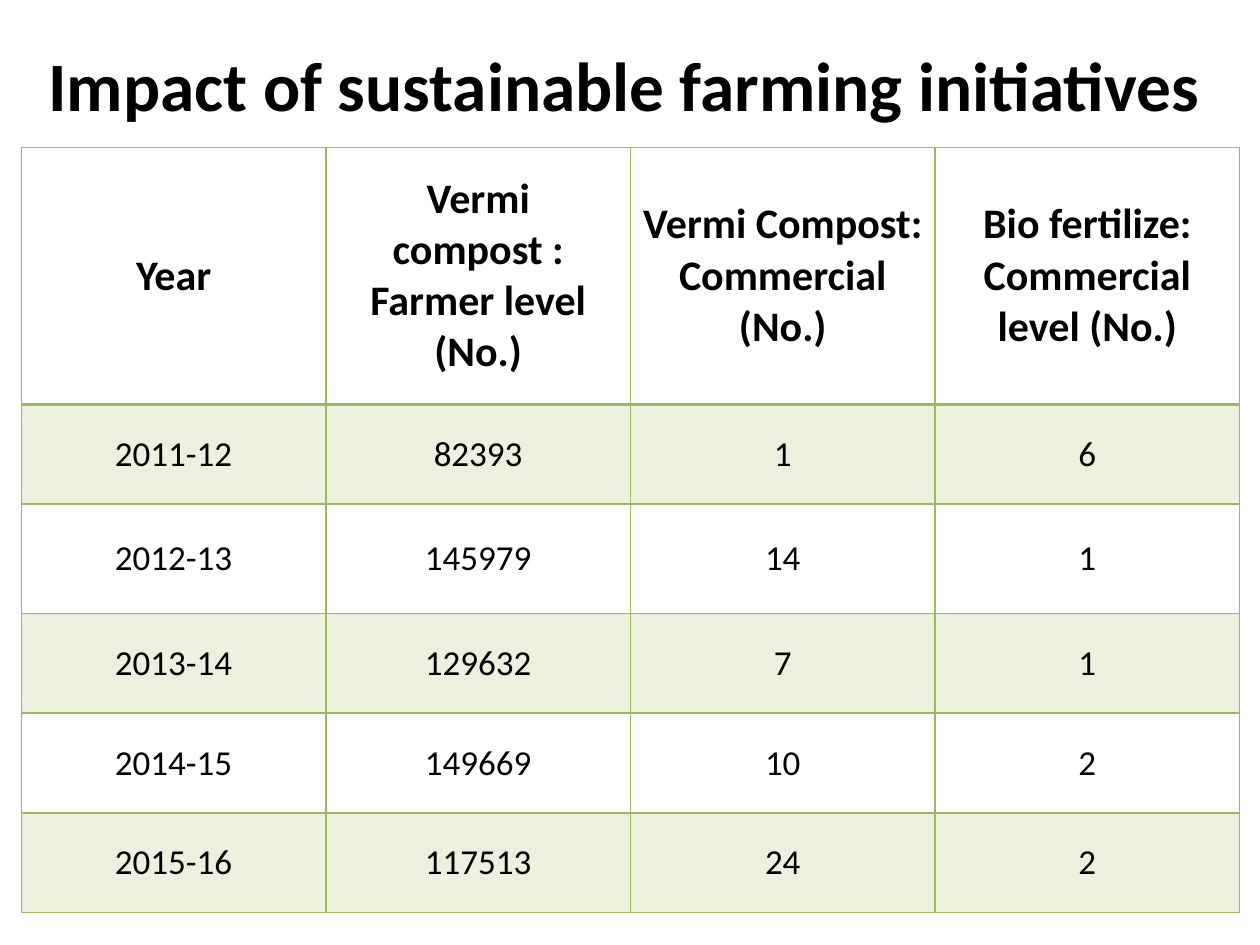
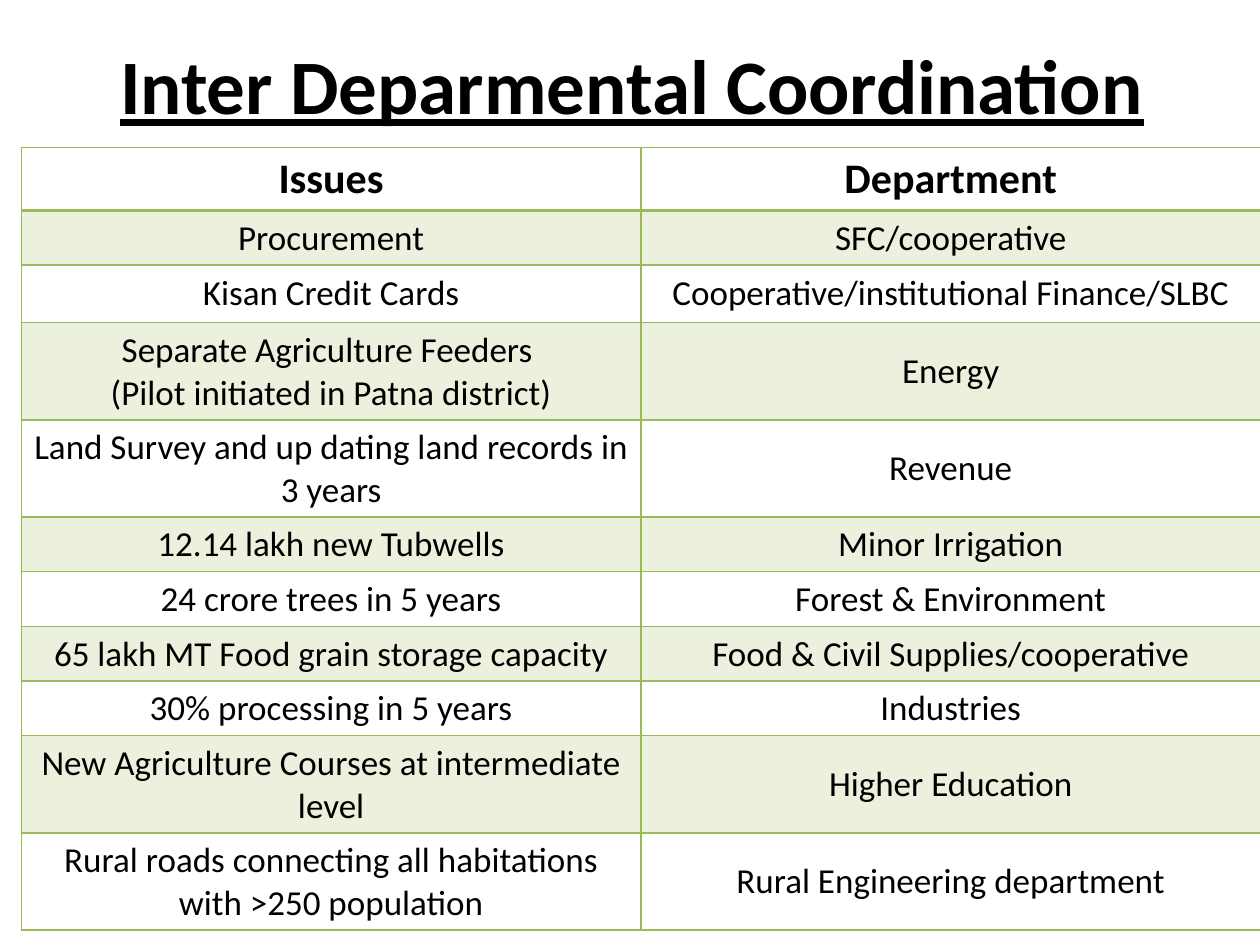
from lxml import etree
from pptx import Presentation
from pptx.dml.color import RGBColor
from pptx.enum.text import MSO_ANCHOR, PP_ALIGN
from pptx.oxml.ns import qn
from pptx.util import Cm, Pt

CENTER = PP_ALIGN.CENTER
MIDDLE = MSO_ANCHOR.MIDDLE
BLANK_LAYOUT = 6
FONT = "Calibri"
COLORS = {"text": "000000", "green": "9BBB59"}
BAND_OPACITY = 20
TITLE_BOX = (0.36, 0.42, 24.77, 2.54)
TABLE_ORIGIN = (0.43, 2.97)

FARMING_ROWS = [
    ("Year", "Vermi compost : Farmer level (No.)",
     "Vermi Compost: Commercial (No.)", "Bio fertilize: Commercial level (No.)"),
    ("2011-12", "82393", "1", "6"),
    ("2012-13", "145979", "14", "1"),
    ("2013-14", "129632", "7", "1"),
    ("2014-15", "149669", "10", "2"),
    ("2015-16", "117513", "24", "2"),
]
FARMING_HEIGHTS = [5.18, 2.01, 2.21, 2.01, 2.01, 2.01]

COORDINATION_ROWS = [
    ("Issues", "Department"),
    ("Procurement", "SFC/cooperative"),
    ("Kisan Credit Cards", "Cooperative/institutional Finance/SLBC"),
    ("Separate Agriculture Feeders \n(Pilot initiated in Patna district)", "Energy"),
    ("Land Survey and up dating land records in 3 years", "Revenue"),
    ("12.14 lakh new Tubwells", "Minor Irrigation"),
    ("24 crore trees in 5 years", "Forest & Environment"),
    ("65 lakh MT Food grain storage capacity", "Food & Civil Supplies/cooperative"),
    ("30% processing in 5 years", "Industries"),
    ("New Agriculture Courses at intermediate level", "Higher Education"),
    ("Rural roads connecting all habitations with >250 population",
     "Rural Engineering department"),
]
COORDINATION_HEIGHTS = [1.27, 1.1, 1.16, 1.96, 1.96, 1.1, 1.1, 1.1, 1.1, 1.96, 1.96]


def write_text(text_frame, text, size, bold=False, underline=False):
    text_frame.word_wrap = True
    text_frame.text = text
    for paragraph in text_frame.paragraphs:
        paragraph.alignment = CENTER
        for run in paragraph.runs:
            font = run.font
            font.name = FONT
            font.size = Pt(size)
            font.bold = bold
            font.underline = underline
            font.color.rgb = RGBColor.from_string(COLORS["text"])


def add_title(slide, box, text, size, underline=False):
    text_frame = slide.shapes.add_textbox(*map(Cm, box)).text_frame
    text_frame.vertical_anchor = MIDDLE
    write_text(text_frame, text, size, bold=True, underline=underline)


def set_borders(cell, top, bottom):
    properties = cell._tc.get_or_add_tcPr()
    for side, width in (("L", 1), ("R", 1), ("T", top), ("B", bottom)):
        line = etree.SubElement(properties, qn(f"a:ln{side}"), w=str(Pt(width)))
        fill = etree.SubElement(line, qn("a:solidFill"))
        etree.SubElement(fill, qn("a:srgbClr"), val=COLORS["green"])


def fill_cell(cell, banded):
    if not banded:
        cell.fill.background()
        return
    cell.fill.solid()
    cell.fill.fore_color.rgb = RGBColor.from_string(COLORS["green"])
    color = cell._tc.tcPr.find(f"{qn('a:solidFill')}/{qn('a:srgbClr')}")
    etree.SubElement(color, qn("a:alpha"), val=str(BAND_OPACITY * 1000))


def add_banded_table(slide, origin, rows, column_width, row_heights):
    column_count = len(rows[0])
    left, top = origin
    table = slide.shapes.add_table(
        len(rows), column_count, Cm(left), Cm(top),
        Cm(column_width * column_count), Cm(sum(row_heights))).table
    table.first_row = False
    table.horz_banding = False
    for column in table.columns:
        column.width = Cm(column_width)
    for row_index, (texts, height) in enumerate(zip(rows, row_heights)):
        table.rows[row_index].height = Cm(height)
        is_header = row_index == 0
        for column_index, text in enumerate(texts):
            cell = table.cell(row_index, column_index)
            cell.vertical_anchor = MIDDLE
            write_text(cell.text_frame, text, 24 if is_header else 20, bold=is_header)
            set_borders(cell, top=2 if row_index == 1 else 1, bottom=2 if is_header else 1)
            fill_cell(cell, banded=row_index % 2 == 1)


def add_table_slide(presentation, title, title_size, rows, column_width, row_heights,
                    underline=False):
    slide = presentation.slides.add_slide(presentation.slide_layouts[BLANK_LAYOUT])
    add_banded_table(slide, TABLE_ORIGIN, rows, column_width, row_heights)
    add_title(slide, TITLE_BOX, title, title_size, underline)


def main():
    presentation = Presentation()
    presentation.slide_width = Cm(25.4)
    presentation.slide_height = Cm(19.05)
    add_table_slide(presentation, "Impact of sustainable farming initiatives ", 39.6,
                    FARMING_ROWS, 6.14, FARMING_HEIGHTS)
    add_table_slide(presentation, "Inter Deparmental Coordination", 44,
                    COORDINATION_ROWS, 12.49, COORDINATION_HEIGHTS, underline=True)
    presentation.save("out.pptx")


if __name__ == "__main__":
    main()
